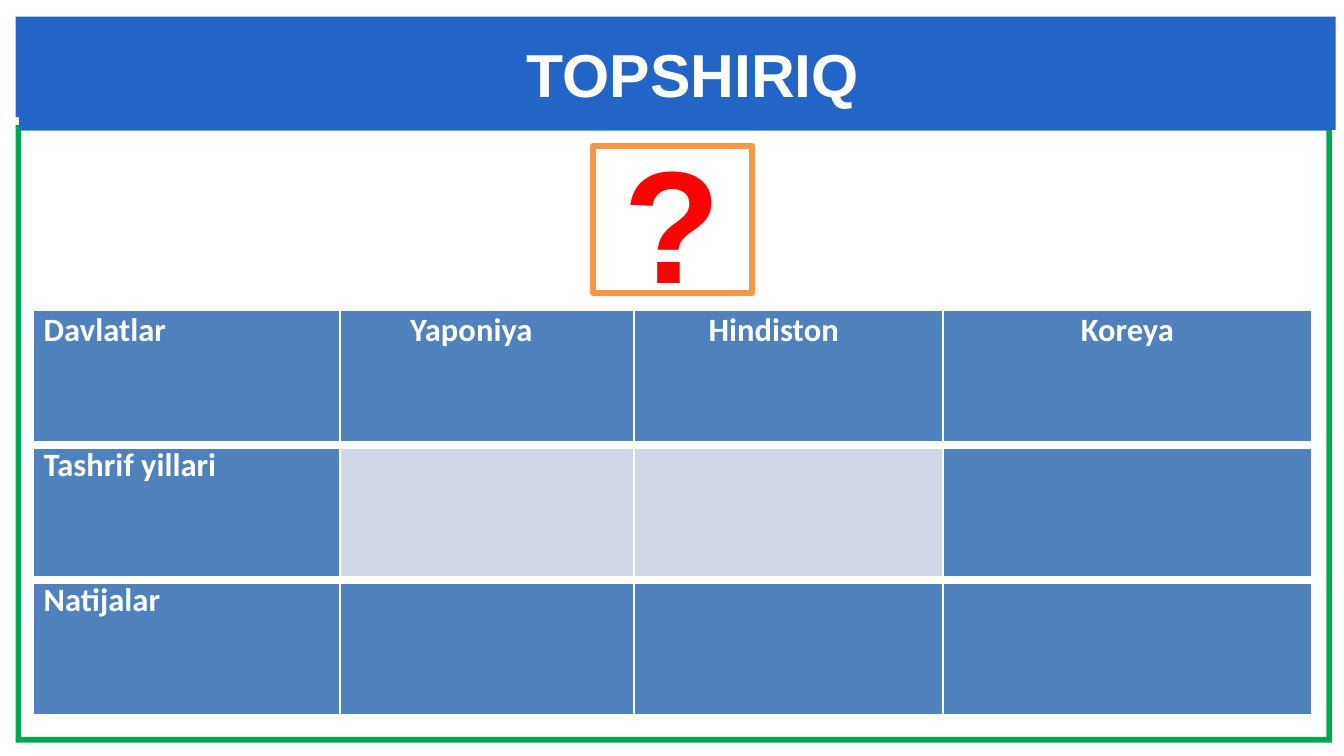
import pptx
import pptx.util
import pptx.dml.color
import pptx.enum.shapes
import pptx.enum.text
import pptx.oxml.ns
import lxml.etree

RGB = pptx.dml.color.RGBColor
WHITE = RGB(0xFF, 0xFF, 0xFF)
GREEN = RGB(0x00, 0xA6, 0x50)
BLUE = RGB(0x23, 0x65, 0xC7)
STEEL = RGB(0x4F, 0x81, 0xBD)
PALE = RGB(0xD0, 0xD8, 0xE8)
ORANGE = RGB(0xF7, 0x96, 0x46)
RED = RGB(0xFF, 0x00, 0x00)

Pt = pptx.util.Pt
KIND = pptx.enum.shapes.MSO_SHAPE
ALIGN = pptx.enum.text.PP_ALIGN
ANCHOR = pptx.enum.text.MSO_ANCHOR
qn = pptx.oxml.ns.qn

deck = pptx.Presentation()
deck.slide_width = pptx.util.Inches(6.31)
deck.slide_height = pptx.util.Inches(3.55)
wide, high = deck.slide_width, deck.slide_height
slide = deck.slides.add_slide(deck.slide_layouts[5])
shapes = slide.shapes


def place(*parts):
    return [int(part * side / 100) for part, side in zip(parts, (wide, high) * 2)]


def write(frame, text, size, name, color, align):
    para = frame.paragraphs[0]
    para.alignment = align
    run = para.add_run()
    run.text = text
    for key, value in {"size": Pt(size), "name": name, "bold": True}.items():
        setattr(run.font, key, value)
    run.font.color.rgb = color
    return para


frame = shapes.add_shape(KIND.FRAME, *place(1.16, 16.55, 97.94, 81.69))
frame.adjustments[0] = 0.009

edge = [(1.16, 2.2), (99.37, 2.2), (99.37, 17.18), (1.4, 17.18), (1.4, 15.49), (1.16, 15.49)]
points = [place(*point) for point in edge]
pen = shapes.build_freeform(*points[0])
pen.add_line_segments(points[1:])
header = pen.convert_to_shape()

query = shapes.add_shape(KIND.RECTANGLE, *place(44.1, 19.35, 11.89, 19.44))

for form, color in ((frame, GREEN), (header, BLUE), (query, WHITE)):
    form.shadow.inherit = False
    form.fill.solid()
    form.fill.fore_color.rgb = color
    form.line.fill.background()

title = shapes.title
header._element.addnext(title._element)
spot = place(17.65, 4.23, 67.83, 10.42)
for key, value in zip(("left", "top", "width", "height"), spot):
    setattr(title, key, value)
look = {
    "margin_left": 0, "margin_right": 0, "margin_bottom": 0,
    "margin_top": Pt(3), "vertical_anchor": ANCHOR.TOP,
    "auto_size": pptx.enum.text.MSO_AUTO_SIZE.NONE,
}
for key, value in look.items():
    setattr(title.text_frame, key, value)
para = write(title.text_frame, "TOPSHIRIQ", 20.5, "Arial", WHITE, ALIGN.CENTER)
para.line_spacing = Pt(23.3)
para.space_before = Pt(3.2)

query.line.color.rgb = ORANGE
query.line.width = Pt(2)
query.text_frame.vertical_anchor = ANCHOR.MIDDLE
write(query.text_frame, "?", 54, "Arial", RED, ALIGN.CENTER)

rows = (
    ("Davlatlar", "Yaponiya", "Hindiston", "Koreya"),
    ("Tashrif yillari", "", "", ""),
    ("Natijalar", "", "", ""),
)
spans = (1.44, 1.38, 1.45, 1.73)
pads = (0.05, 0.33, 0.35, 0)
spot = place(2.46, 40.98, 95.15, 53.66)
grid = shapes.add_table(len(rows), len(spans), *spot).table
grid.horz_banding = False
for col, span in zip(grid.columns, spans):
    col.width = int(spot[2] * span / sum(spans))

for r, words in enumerate(rows):
    for c, word in enumerate(words):
        cell = grid.cell(r, c)
        cell.fill.solid()
        cell.fill.fore_color.rgb = PALE if r == 1 and c in (1, 2) else STEEL
        look = {
            "margin_left": pptx.util.Inches(pads[c]),
            "margin_right": 0, "margin_top": 0, "margin_bottom": 0,
        }
        for key, value in look.items():
            setattr(cell, key, value)
        if word:
            align = ALIGN.CENTER if c == 3 else ALIGN.LEFT
            para = write(cell.text_frame, word, 11, "Calibri", WHITE, align)
            para.space_before = Pt(0.7)
        props = cell._tc.get_or_add_tcPr()
        thick = {"L": 1, "R": 1, "T": 3 if r else 1, "B": 3 if r < 2 else 1}
        for at, (side, size) in enumerate(thick.items()):
            rule = lxml.etree.Element(qn("a:ln" + side), w=str(Pt(size)))
            fill = lxml.etree.SubElement(rule, qn("a:solidFill"))
            lxml.etree.SubElement(fill, qn("a:srgbClr"), val=str(WHITE))
            props.insert(at, rule)

deck.save("out.pptx")
